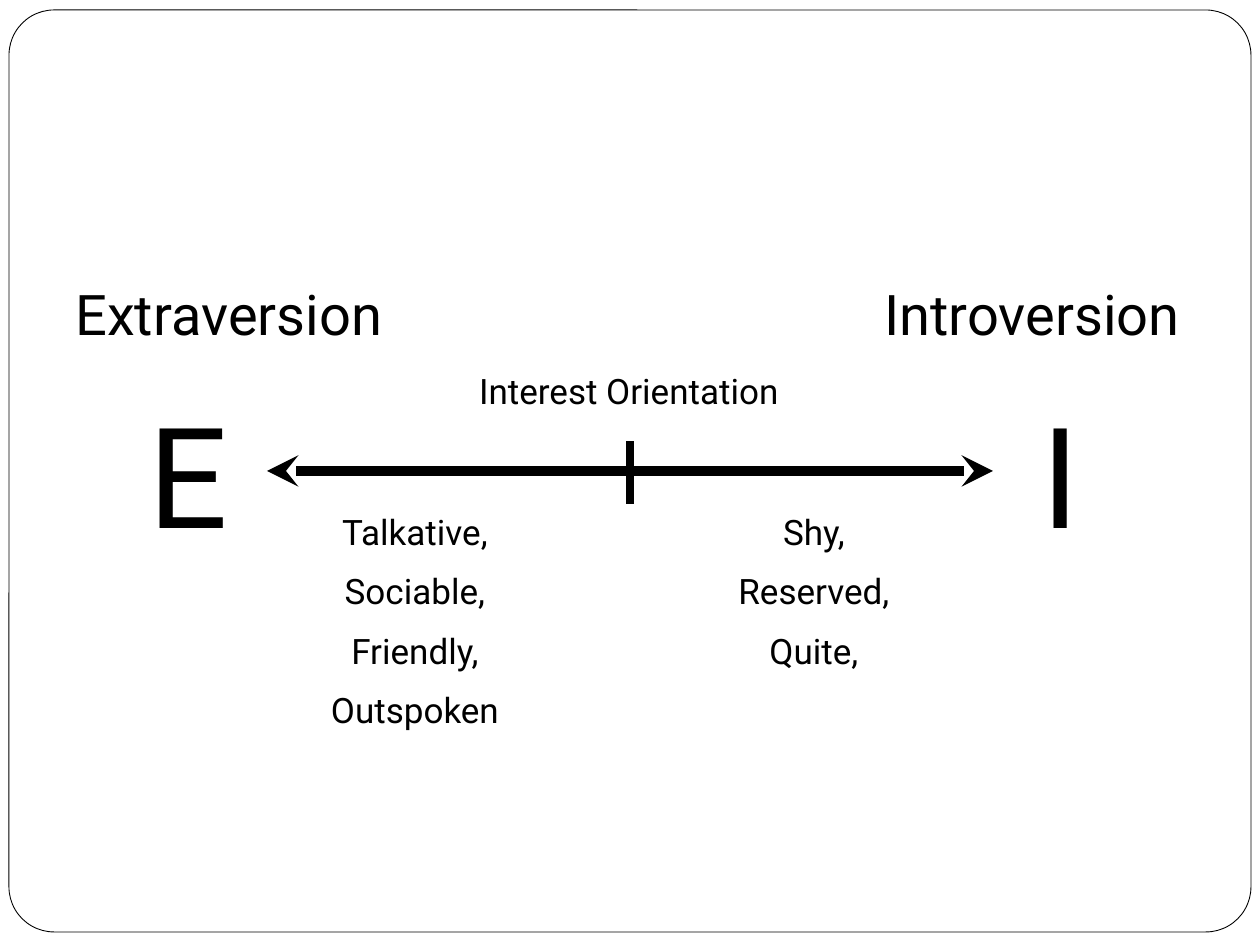
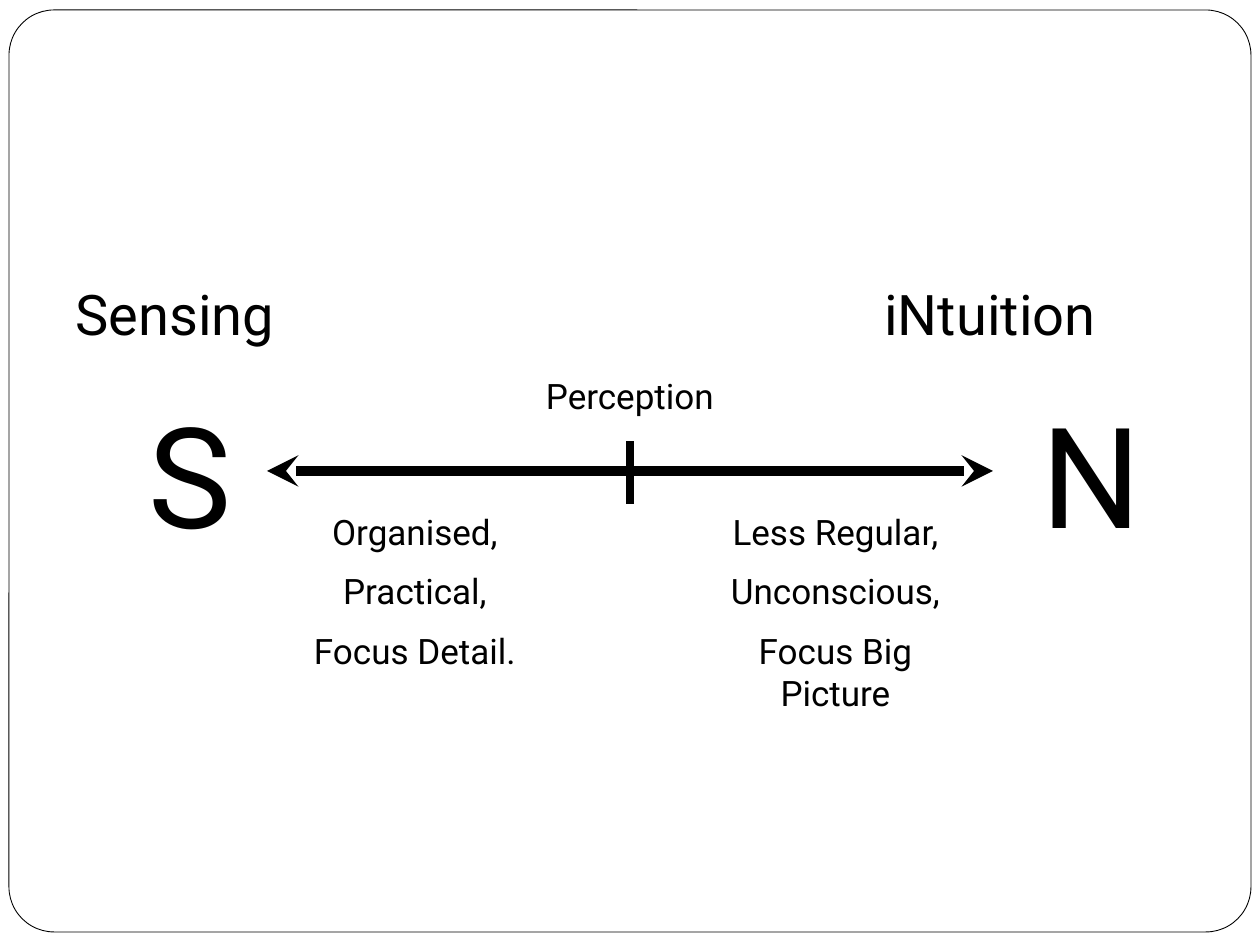
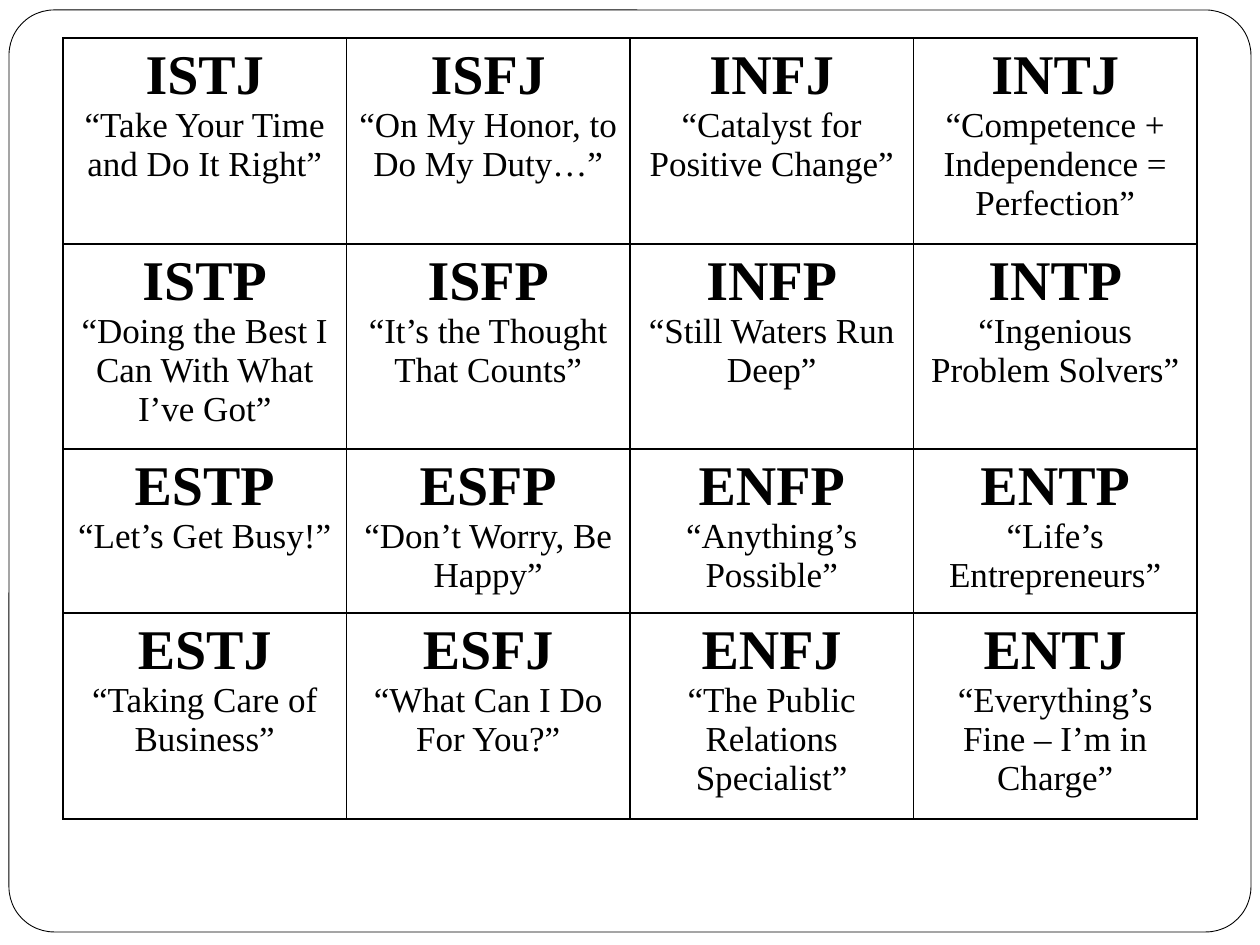
from dataclasses import dataclass

from lxml.etree import SubElement
from pptx import Presentation
from pptx.dml.color import RGBColor
from pptx.enum.shapes import MSO_CONNECTOR, MSO_SHAPE
from pptx.enum.text import PP_ALIGN
from pptx.oxml import parse_xml
from pptx.oxml.ns import nsdecls, qn
from pptx.util import Emu, Pt

SCALES = [
    {
        "caption": "Interest Orientation",
        "caption_at": (353, 363),
        "left": ("E", "Extraversion", ["Talkative,", "Sociable,", "Friendly,", "Outspoken"]),
        "right": ("I", "Introversion", ["Shy,", "Reserved,", "Quite,"]),
        "right_traits_width": 242,
    },
    {
        "caption": "Perception",
        "caption_at": (354, 368),
        "left": ("S", "Sensing", ["Organised,", "Practical,", "Focus Detail."]),
        "right": ("N", "iNtuition", ["Less Regular,", "Unconscious,", "Focus Big Picture"]),
        "right_traits_width": 285,
    },
]

TYPES = [
    [
        ("ISTJ", "“Take Your Time and Do It Right”"),
        ("ISFJ", "“On My Honor, to Do My Duty…”"),
        ("INFJ", "“Catalyst for Positive Change”"),
        ("INTJ", "“Competence + Independence = Perfection”"),
    ],
    [
        ("ISTP", "“Doing the Best I Can With What I’ve Got”"),
        ("ISFP", "“It’s the Thought That Counts”"),
        ("INFP", "“Still Waters Run Deep”"),
        ("INTP", "“Ingenious Problem Solvers”"),
    ],
    [
        ("ESTP", "“Let’s Get Busy!”"),
        ("ESFP", "“Don’t Worry, Be Happy”"),
        ("ENFP", "“Anything’s Possible”"),
        ("ENTP", "“Life’s Entrepreneurs”"),
    ],
    [
        ("ESTJ", "“Taking Care of Business”"),
        ("ESFJ", "“What Can I Do For You?”"),
        ("ENFJ", "“The Public Relations Specialist”"),
        ("ENTJ", "“Everything’s Fine – I’m in Charge”"),
    ],
]


@dataclass(frozen=True)
class Theme:
    ink: RGBColor = RGBColor(0, 0, 0)
    paper: RGBColor = RGBColor(255, 255, 255)
    scale_font: str = "Roboto"
    table_font: str = "Times New Roman"
    letter: int = 80
    heading: int = 32
    body: int = 20
    frame_line: float = 0.5
    cell_line: int = 1
    axis_line: int = 6
    tick_line: float = 4.5


THEME = Theme()
PX_PER_INCH = 126
SLIDE_SIZE = (1260, 945)
FRAME = (9, 10, 1242, 922)
FRAME_ROUNDING = 0.049
AXIS = (267, 471, 993, 471)
TICK = (630, 441, 630, 504)
CAPTION_SIZE = (552, 54)
HEADING_SIZE = (388, 79)
LETTER_SIZE = (210, 180)
HEADING_TOP, LETTER_TOP, TRAITS_TOP = 273, 382, 504
SIDE_LEFTS = {"left": (63, 136, 294), "right": (872, 1029, 693)}
TRAITS_WIDTH, TRAITS_HEIGHT = 242, 243
TABLE_LEFT, TABLE_TOP, COLUMN_WIDTH = 63, 38, 283.5
ROW_HEIGHTS = (206, 205, 164, 206)


def px(*lengths):
    return [Emu(round(length * 914400 / PX_PER_INCH)) for length in lengths]


def set_format(target, values):
    for name, value in values.items():
        setattr(target, name, value)


def write(frame, lines, align, font):
    """Fill a text frame with (text, size, bold, space before) lines."""
    for index, (text, size, bold, gap) in enumerate(lines):
        para = frame.paragraphs[0] if index == 0 else frame.add_paragraph()
        set_format(para, {"alignment": align, "space_before": Pt(gap if index else 0)})
        span = para.add_run()
        span.text = text
        set_format(span.font, {"name": font, "size": Pt(size), "bold": bold})
        span.font.color.rgb = THEME.ink


def add_text(page, at, texts, size, align=PP_ALIGN.LEFT):
    box = page.shapes.add_textbox(*px(*at))
    box.text_frame.word_wrap = True
    lines = [(text, size, False, size / 2) for text in texts]
    write(box.text_frame, lines, align, THEME.scale_font)


def add_line(page, ends, width, arrows=False):
    line = page.shapes.add_connector(MSO_CONNECTOR.STRAIGHT, *px(*ends))
    line.line.color.rgb = THEME.ink
    line.line.width = Pt(width)
    if arrows:
        for end in ("a:headEnd", "a:tailEnd"):
            SubElement(line.line._get_or_add_ln(), qn(end), type="stealth")
    SubElement(line._element.spPr, qn("a:effectLst"))


def add_page(deck):
    """Add a blank slide with the rounded frame that all slides share."""
    page = deck.slides.add_slide(deck.slide_layouts[6])
    frame = page.shapes.add_shape(MSO_SHAPE.ROUNDED_RECTANGLE, *px(*FRAME))
    frame.adjustments[0] = FRAME_ROUNDING
    frame.shadow.inherit = False
    frame.fill.solid()
    frame.fill.fore_color.rgb = THEME.paper
    frame.line.color.rgb = THEME.ink
    frame.line.width = Pt(THEME.frame_line)
    return page


def add_scale_page(deck, scale):
    page = add_page(deck)
    add_line(page, AXIS, THEME.axis_line, arrows=True)
    add_line(page, TICK, THEME.tick_line)
    add_text(page, scale["caption_at"] + CAPTION_SIZE, [scale["caption"]],
             THEME.body, PP_ALIGN.CENTER)
    widths = {"left": TRAITS_WIDTH, "right": scale["right_traits_width"]}
    for side, (heading_left, letter_left, traits_left) in SIDE_LEFTS.items():
        letter, heading, traits = scale[side]
        add_text(page, (heading_left, HEADING_TOP) + HEADING_SIZE, [heading], THEME.heading)
        add_text(page, (letter_left, LETTER_TOP) + LETTER_SIZE, [letter], THEME.letter)
        add_text(page, (traits_left, TRAITS_TOP, widths[side], TRAITS_HEIGHT),
                 traits, THEME.body, PP_ALIGN.CENTER)


def add_borders(cell):
    properties = cell._tc.get_or_add_tcPr()
    for index, edge in enumerate(("lnL", "lnR", "lnT", "lnB")):
        properties.insert(index, parse_xml(
            f'<a:{edge} {nsdecls("a")} w="{Pt(THEME.cell_line)}"><a:solidFill>'
            f'<a:srgbClr val="{THEME.ink}"/></a:solidFill></a:{edge}>'))


def add_types_page(deck):
    page = add_page(deck)
    columns = len(TYPES[0])
    at = px(TABLE_LEFT, TABLE_TOP, COLUMN_WIDTH * columns, sum(ROW_HEIGHTS))
    table = page.shapes.add_table(len(TYPES), columns, *at).table
    set_format(table, {"first_row": False, "horz_banding": False})
    for column in table.columns:
        column.width, = px(COLUMN_WIDTH)
    for row, height, types in zip(table.rows, ROW_HEIGHTS, TYPES):
        row.height, = px(height)
        for cell, (name, motto) in zip(row.cells, types):
            cell.fill.background()
            add_borders(cell)
            lines = [(name, THEME.heading, True, 0), (motto, THEME.body, False, 0)]
            write(cell.text_frame, lines, PP_ALIGN.CENTER, THEME.table_font)


def main():
    deck = Presentation()
    deck.slide_width, deck.slide_height = px(*SLIDE_SIZE)
    for scale in SCALES:
        add_scale_page(deck, scale)
    add_types_page(deck)
    deck.save("out.pptx")


if __name__ == "__main__":
    main()
